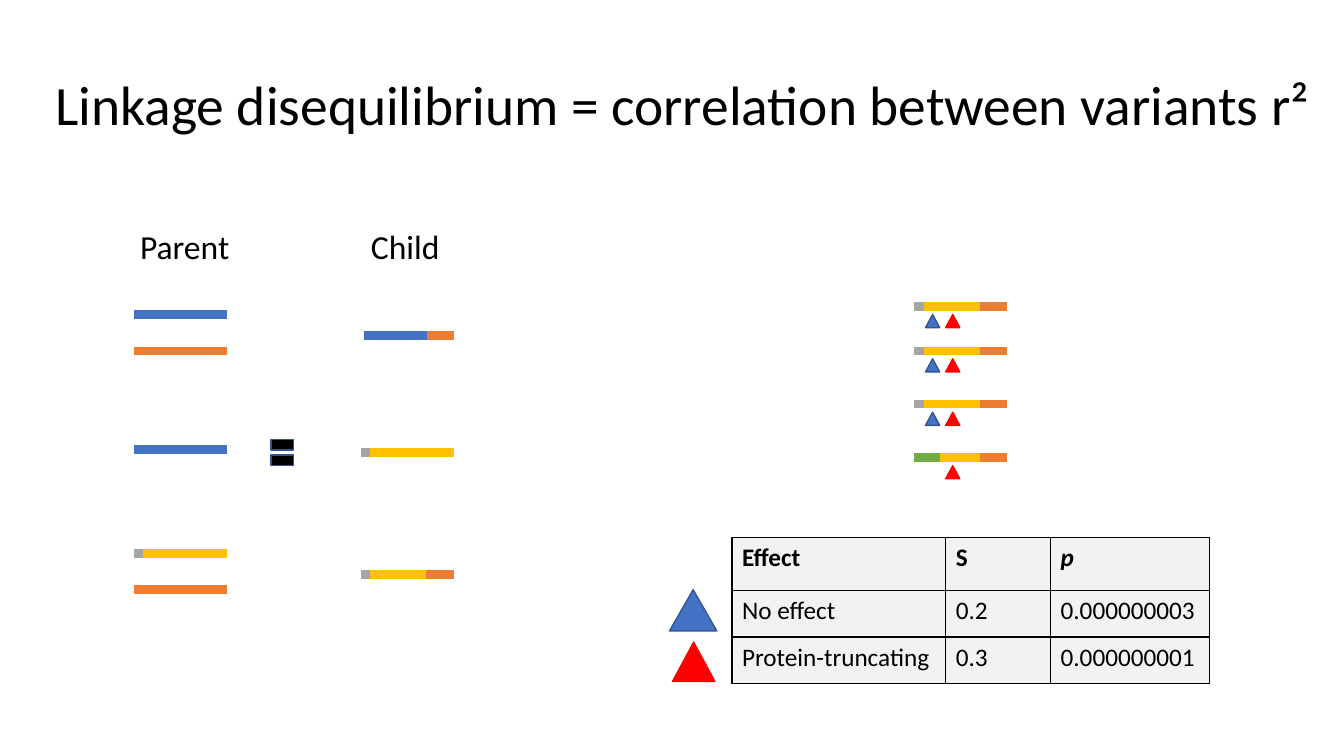
from lxml import etree
from pptx import Presentation
from pptx import util as u
from pptx.dml.color import RGBColor
from pptx.enum import shapes, text
from pptx.oxml.ns import qn

PX = 9144  # EMU in one px, 100 px to the inch
THEME = {
    "font": "Calibri", "title": 39.6, "label": 24, "cell": 18,
    "ink": "000000", "blue": "4472C4", "orange": "ED7D31", "gold": "FFC000",
    "gray": "A5A5A5", "green": "70AD47", "red": "FF0000", "edge": "325491",
    "pale": "F2F2F2", "strand": 6, "rule": 1,
}


def write(frame, words, size, bold=False, italic=False, space=None):
    para = frame.paragraphs[0]
    para.line_spacing = space
    run = para.add_run()
    run.text = words
    font = run.font
    font.name, font.size = THEME["font"], u.Pt(THEME[size])
    font.bold, font.italic = bold, italic
    font.color.rgb = RGBColor.from_string(THEME["ink"])


def draw(group, kind, box, fill, edge):
    shape = group.shapes.add_shape(kind, *[n * PX for n in box])
    shape.shadow.inherit = False
    shape.fill.solid()
    shape.fill.fore_color.rgb = RGBColor.from_string(THEME[fill])
    shape.line.color.rgb = RGBColor.from_string(THEME[edge])
    shape.line.width = u.Pt(THEME["rule"])


deck = Presentation()
deck.slide_width, deck.slide_height = 1333 * PX, 750 * PX
slide = deck.slides.add_slide(deck.slide_layouts[6])

# Title and column labels
title = "Linkage disequilibrium = correlation between variants r²"
for words, box, size, inset, anchor, space in [
    (title, (45, 65, 1278, 84), "title", 10, text.MSO_ANCHOR.MIDDLE, 0.9),
    ("Parent", (129, 219, 151, 50), "label", 5, text.MSO_ANCHOR.TOP, None),
    ("Child", (358, 219, 151, 50), "label", 5, text.MSO_ANCHOR.TOP, None),
]:
    frame = slide.shapes.add_textbox(*[n * PX for n in box]).text_frame
    frame.word_wrap = True
    frame.vertical_anchor = anchor
    frame.margin_top = frame.margin_bottom = inset * PX
    write(frame, words, size, space=space)

# Strands: left, height, parts (colour, start, end), variants carried
mixed = [("gold", 0, 92), ("gray", 0, 9), ("orange", 65, 92)]
late = [("gold", 0, 92), ("green", 0, 25), ("orange", 65, 92)]
early = mixed[:2]
blue, orange = [("blue", 0, 92)], [("orange", 0, 92)]
cross = [("blue", 3, 66), ("orange", 66, 92)]
both = [("blue", "edge", 11), ("red", "red", 31)]
strands = [
    (133, 312, blue, []), (133, 348, orange, []), (133, 446, blue, []),
    (133, 549, early, []), (133, 585, orange, []),
    (358, 333, cross, []), (358, 449, early, []), (358, 570, mixed, []),
    (907, 304, mixed, both), (907, 348, mixed, both),
    (907, 401, mixed, both), (907, 454, late, both[1:]),
]
for left, y, parts, marks in strands:
    group = slide.shapes.add_group_shape()
    for color, start, end in parts:
        line = group.shapes.add_connector(
            shapes.MSO_CONNECTOR.STRAIGHT,
            (left + start) * PX, y * PX, (left + end) * PX, y * PX)
        line.line.color.rgb = RGBColor.from_string(THEME[color])
        line.line.width = u.Pt(THEME["strand"])
        props = line._element.find(qn("p:spPr"))
        etree.SubElement(props, qn("a:effectLst"))
    for fill, edge, shift in marks:
        box = (left + shift, y + 8, 14, 13)
        draw(group, shapes.MSO_SHAPE.ISOSCELES_TRIANGLE, box, fill, edge)

# Equals sign and table keys
for kind, box, fill, edge in [
    (shapes.MSO_SHAPE.MATH_EQUAL, (265, 427, 30, 44), "ink", "edge"),
    (shapes.MSO_SHAPE.ISOSCELES_TRIANGLE, (664, 585, 47, 41), "blue", "edge"),
    (shapes.MSO_SHAPE.ISOSCELES_TRIANGLE, (667, 637, 42, 39), "red", "red"),
]:
    draw(slide, kind, box, fill, edge)

# Effect table
rows = [
    ("Effect", "S", "p"),
    ("No effect", "0.2", "0.000000003"),
    ("Protein-truncating", "0.3", "0.000000001"),
]
widths, heights = (212, 104, 158), (53, 46, 46)
table = slide.shapes.add_table(
    len(rows), len(widths), 726 * PX, 533 * PX,
    sum(widths) * PX, sum(heights) * PX).table
for col, width in zip(table.columns, widths):
    col.width = width * PX
for r, row in enumerate(rows):
    table.rows[r].height = heights[r] * PX
    for c, words in enumerate(row):
        cell = table.cell(r, c)
        props = cell._tc.get_or_add_tcPr()
        for side in ("lnL", "lnR", "lnT", "lnB"):
            rule = etree.SubElement(
                props, qn("a:" + side), w=str(u.Pt(THEME["rule"])))
            solid = etree.SubElement(rule, qn("a:solidFill"))
            etree.SubElement(solid, qn("a:srgbClr"), val=THEME["ink"])
        cell.fill.solid()
        cell.fill.fore_color.rgb = RGBColor.from_string(THEME["pale"])
        write(cell.text_frame, words, "cell", bold=r == 0, italic=words == "p")

deck.save("out.pptx")
